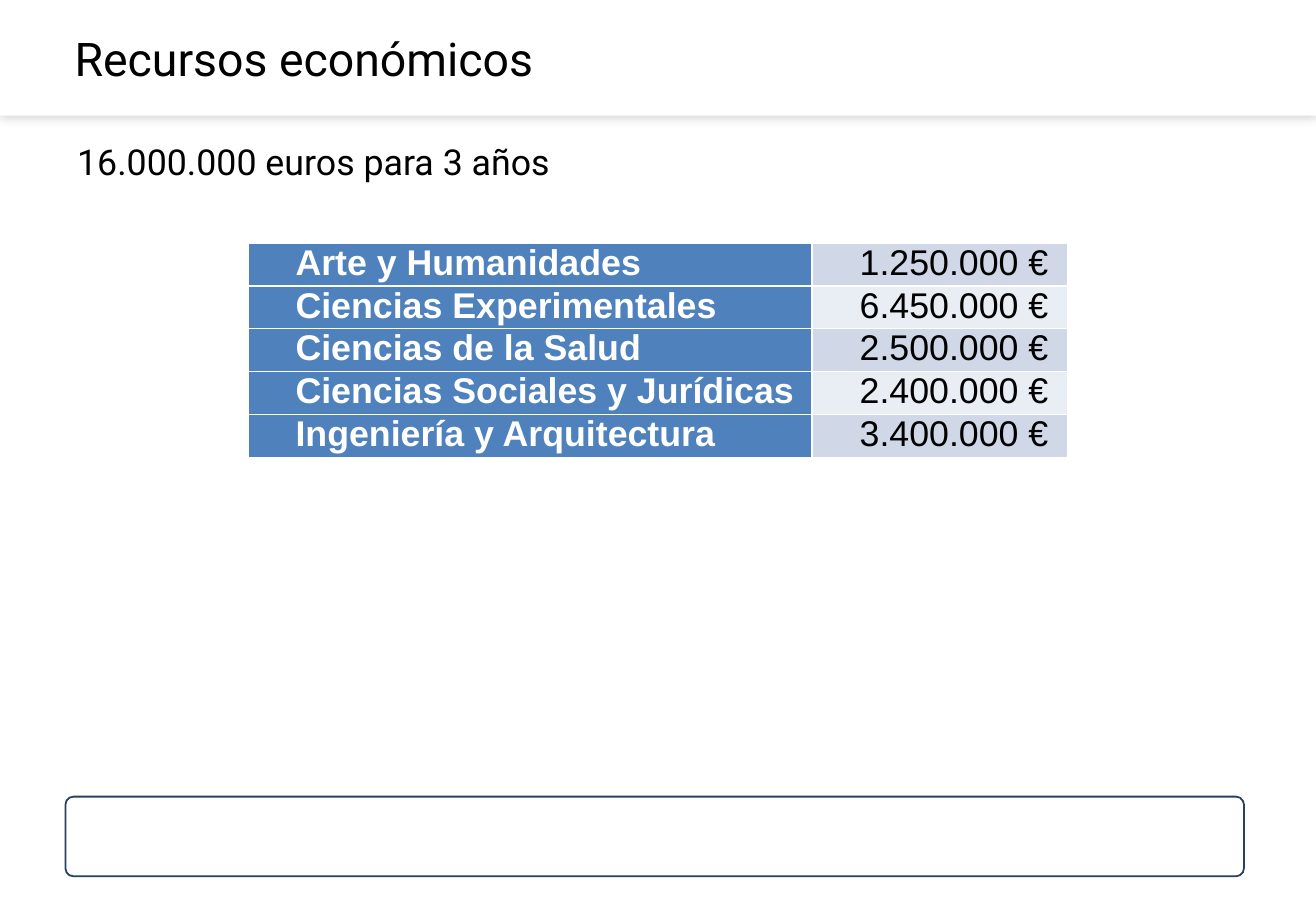
from lxml import etree
from pptx import Presentation, util as u
from pptx.dml.color import RGBColor
from pptx.enum import shapes, text
from pptx.oxml import ns

WIDTH, HEIGHT = 10.24, 7.09
TITLE = "Recursos económicos"
BUDGET = "16.000.000 euros para 3 años"
AREAS = [
    ("Arte y Humanidades", "1.250.000 €"),
    ("Ciencias Experimentales", "6.450.000 €"),
    ("Ciencias de la Salud", "2.500.000 €"),
    ("Ciencias Sociales y Jurídicas", "2.400.000 €"),
    ("Ingeniería y Arquitectura", "3.400.000 €"),
]
COLUMNS = (4.39, 1.99)
ROW_HEIGHT = 0.31
COLORS = {
    "white": "FFFFFF", "black": "000000", "frame": "254061",
    "area": "4F81BD", "odd": "D0D8E8", "even": "E9EDF4",
}


def color(name):
    return RGBColor.from_string(COLORS[name])


def add_element(parent, tag, **attributes):
    return etree.SubElement(parent, ns.qn(tag), attributes)


def add_panel(slide, kind, box):
    shape = slide.shapes.add_shape(kind, *map(u.Inches, box))
    shape.shadow.inherit = False
    shape.fill.solid()
    shape.fill.fore_color.rgb = color("white")
    shape.line.fill.background()
    return shape


def add_run(paragraph, words, font, size, shade, bold=False):
    run = paragraph.add_run()
    run.text = words
    run.font.name, run.font.size, run.font.bold = font, u.Pt(size), bold
    run.font.color.rgb = color(shade)


def add_text(slide, box, words, size, anchor, top=0.03):
    frame = slide.shapes.add_textbox(*map(u.Inches, box)).text_frame
    frame.word_wrap = True
    frame.vertical_anchor = anchor
    frame.margin_left = frame.margin_right = u.Inches(0.07)
    frame.margin_top, frame.margin_bottom = u.Inches(top), u.Inches(0.03)
    add_run(frame.paragraphs[0], words, "Roboto", size, "black")


def fill_cell(cell, words, fill, shade, bold):
    cell.fill.solid()
    cell.fill.fore_color.rgb = color(fill)
    cell.margin_left = cell.margin_right = u.Inches(0.07)
    cell.margin_top = cell.margin_bottom = 0
    paragraph = cell.text_frame.paragraphs[0]
    paragraph.alignment = text.PP_ALIGN.JUSTIFY
    paragraph._p.get_or_add_pPr().set("indent", str(u.Inches(0.3)))
    add_run(paragraph, words, "Arial", 20, shade, bold)
    properties = cell._tc.get_or_add_tcPr()
    for position, side in enumerate(("a:lnL", "a:lnR", "a:lnT", "a:lnB")):
        border = etree.Element(ns.qn(side), w=str(u.Pt(1)))
        solid = add_element(border, "a:solidFill")
        add_element(solid, "a:srgbClr", val=COLORS["white"])
        properties.insert(position, border)


def add_area_table(slide):
    width, height = sum(COLUMNS), ROW_HEIGHT * len(AREAS)
    box = ((WIDTH - width) / 2, 1.89, width, height)
    table = slide.shapes.add_table(len(AREAS), len(COLUMNS), *map(u.Inches, box)).table
    table.first_row = table.horz_banding = False
    for column, column_width in zip(table.columns, COLUMNS):
        column.width = u.Inches(column_width)
    for index, (area, amount) in enumerate(AREAS):
        table.rows[index].height = u.Inches(ROW_HEIGHT)
        fill_cell(table.cell(index, 0), area, "area", "white", True)
        fill_cell(table.cell(index, 1), amount, ("odd", "even")[index % 2], "black", False)


def main():
    presentation = Presentation()
    presentation.slide_width, presentation.slide_height = u.Inches(WIDTH), u.Inches(HEIGHT)
    slide = presentation.slides.add_slide(presentation.slide_layouts[6])

    header = add_panel(slide, shapes.MSO_SHAPE.RECTANGLE, (0, 0, WIDTH, 0.9))
    effects = header._element.spPr.find(ns.qn("a:effectLst"))
    shadow = add_element(effects, "a:outerShdw", blurRad=str(u.Pt(6)), dist="0", dir="13500000")
    shade = add_element(shadow, "a:srgbClr", val=COLORS["black"])
    add_element(shade, "a:alpha", val="20000")

    footer = add_panel(slide, shapes.MSO_SHAPE.ROUNDED_RECTANGLE, (0.51, 6.2, 9.17, 0.62))
    footer.adjustments[0] = 0.1
    footer.line.color.rgb = color("frame")
    footer.line.width = u.Pt(1)

    add_text(slide, (0.51, 0.09, 9.21, 0.73), TITLE, 26, text.MSO_ANCHOR.MIDDLE)
    add_text(slide, (0.53, 1.03, 9.18, 5.02), BUDGET, 20, text.MSO_ANCHOR.TOP, top=0.06)
    add_area_table(slide)
    presentation.save("out.pptx")


if __name__ == "__main__":
    main()
